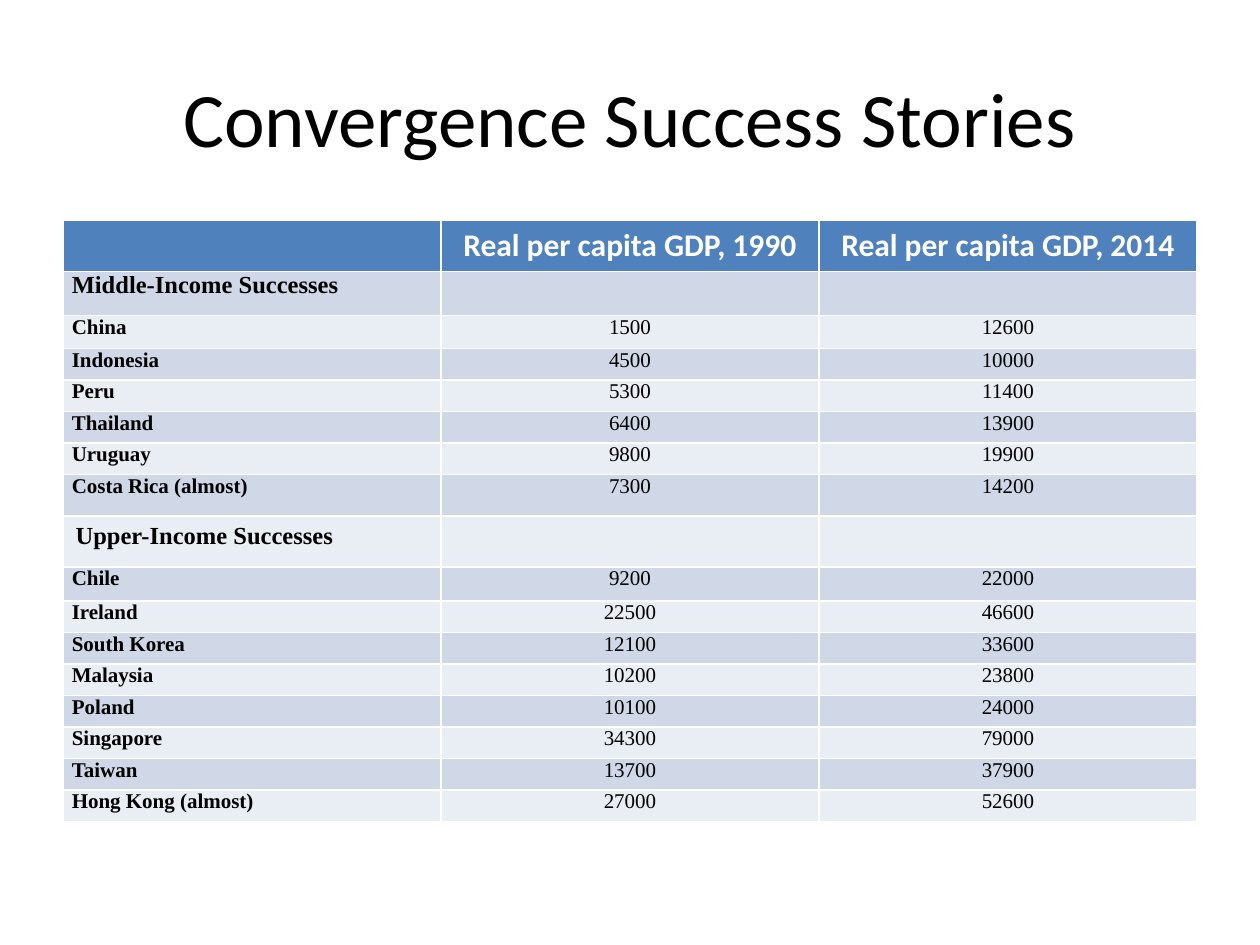
"""Build a slide with a table of convergence success stories."""
from pptx import Presentation
from pptx.dml.color import RGBColor
from pptx.enum.text import MSO_ANCHOR, PP_ALIGN
from pptx.util import Pt

CENTER, LEFT = PP_ALIGN.CENTER, PP_ALIGN.LEFT
MIDDLE = MSO_ANCHOR.MIDDLE
PX = 9144
BODY_FONT = "Times New Roman"
HEADER_FILL, BANDS = "4F81BD", ("E9EDF4", "D0D8E8")

ROWS = [
    (40, "", "Real per capita GDP, 1990", "Real per capita GDP, 2014"),
    (35, "Middle-Income Successes", "", ""),
    (26, "China", "1500", "12600"),
    (25, "Indonesia", "4500", "10000"),
    (25, "Peru", "5300", "11400"),
    (25, "Thailand", "6400", "13900"),
    (25, "Uruguay", "9800", "19900"),
    (33, "Costa Rica (almost)", "7300", "14200"),
    (40, "Upper-Income Successes", "", ""),
    (27, "Chile", "9200", "22000"),
    (25, "Ireland", "22500", "46600"),
    (25, "South Korea", "12100", "33600"),
    (25, "Malaysia", "10200", "23800"),
    (25, "Poland", "10100", "24000"),
    (25, "Singapore", "34300", "79000"),
    (25, "Taiwan", "13700", "37900"),
    (25, "Hong Kong (almost)", "27000", "52600"),
]
HEADER_ROW, UPPER_ROW = 0, 8


def rgb(value):
    return RGBColor.from_string(value)


def add_run(p, text, size, font, color, bold, align):
    p.alignment = align
    r = p.add_run()
    r.text = text
    r.font.size = Pt(size)
    r.font.name = font
    r.font.bold = bold
    r.font.color.rgb = rgb(color)


prs = Presentation()
prs.slide_width, prs.slide_height = 1000 * PX, 750 * PX
s = prs.slides.add_slide(prs.slide_layouts[5])

title = s.shapes.title
title.left, title.top, title.width, title.height = 50 * PX, 30 * PX, 900 * PX, 125 * PX
tf = title.text_frame
tf.vertical_anchor = MIDDLE
add_run(tf.paragraphs[0], "Convergence Success Stories", 44, "Calibri", "000000", False, CENTER)

total = sum(row[0] for row in ROWS)
table = s.shapes.add_table(len(ROWS), 3, 50 * PX, 175 * PX, 900 * PX, total * PX).table

for i, (height, *texts) in enumerate(ROWS):
    table.rows[i].height = height * PX
    header = i == HEADER_ROW
    for j, text in enumerate(texts):
        cell = table.cell(i, j)
        cell.fill.solid()
        cell.fill.fore_color.rgb = rgb(HEADER_FILL if header else BANDS[i % 2])
        if i not in (HEADER_ROW, UPPER_ROW):
            cell.margin_left = cell.margin_right = 7 * PX
            cell.margin_top = cell.margin_bottom = 0
        if not text:
            continue
        p = cell.text_frame.paragraphs[0]
        if header:
            add_run(p, text, 18, "Calibri", "FFFFFF", True, CENTER)
        elif j:
            add_run(p, text, 12, BODY_FONT, "000000", False, CENTER)
        else:
            size = 12 if texts[1] else 14
            add_run(p, text, size, BODY_FONT, "000000", True, LEFT)

prs.save("out.pptx")
